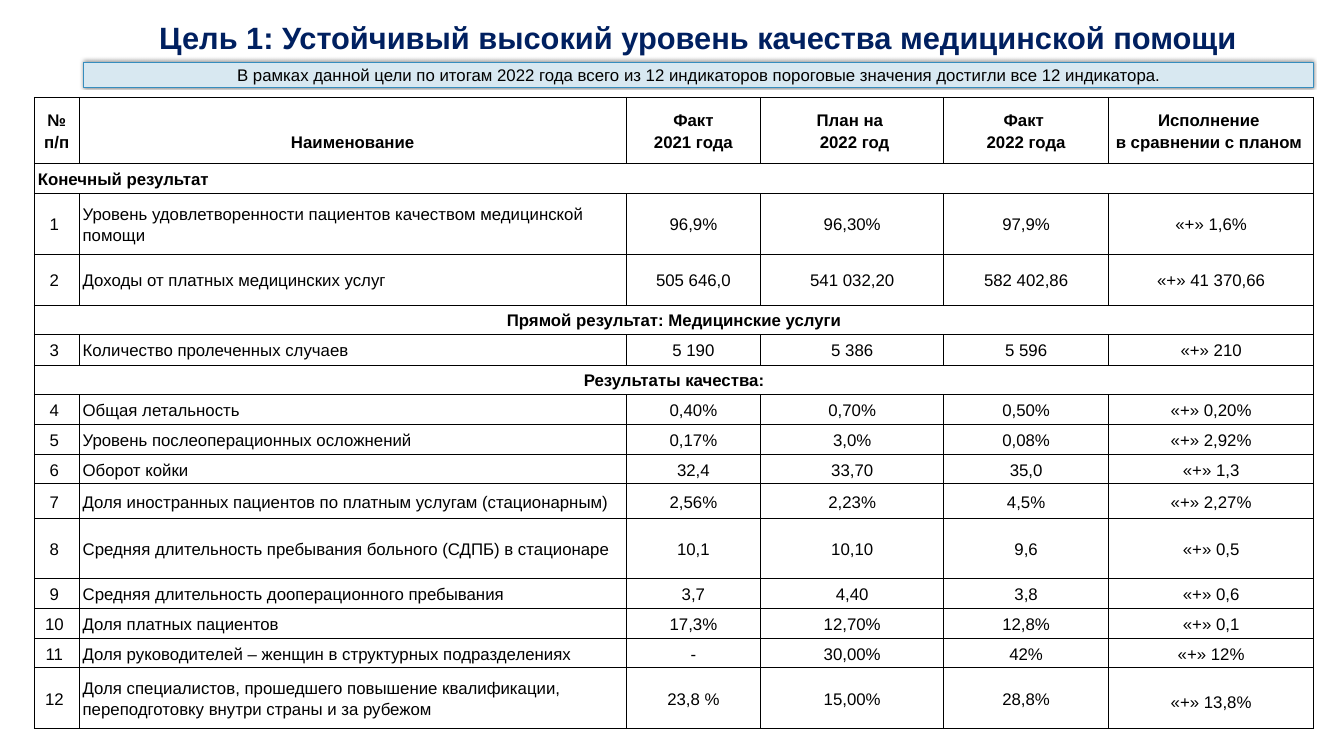
from pptx import Presentation
from pptx.dml.color import RGBColor
from pptx.enum.shapes import MSO_SHAPE as SHAPE
from pptx.enum.text import MSO_ANCHOR as ANCHOR, PP_ALIGN as ALIGN
from pptx.oxml import parse_xml
from pptx.oxml.ns import nsdecls
from pptx.util import Inches, Pt

NAVY, BLACK, PALE, BLUE = "002060", "000000", "D8E8F1", "368DBE"
COLS = [0.89, 10.85, 2.67, 3.63, 3.27, 4.07]
ROW_H, TALL_ROW_H = 0.59, 1.2
ROW_HEIGHTS = {0: 1.32, 2: TALL_ROW_H, 3: 1.01, 5: 0.6, 10: 0.68, 11: TALL_ROW_H, 15: TALL_ROW_H}
HEADER = ["№ п/п", "Наименование", "Факт\n2021 года", "План на \n 2022 год",
          "Факт \n2022 года", "Исполнение \nв сравнении с планом "]
SECTIONS = [
    ("Конечный результат", ALIGN.LEFT, [
        ("Уровень удовлетворенности пациентов качеством медицинской помощи", "96,9%", "96,30%", "97,9%", "1,6%"),
        ("Доходы от платных медицинских услуг", "505 646,0", "541 032,20", "582 402,86", "41 370,66"),
    ]),
    ("Прямой результат: Медицинские услуги", ALIGN.CENTER, [
        ("Количество пролеченных случаев", "5 190", "5 386", "5 596", "210"),
    ]),
    ("Результаты качества:", ALIGN.CENTER, [
        ("Общая летальность", "0,40%", "0,70%", "0,50%", "0,20%"),
        ("Уровень послеоперационных осложнений", "0,17%", "3,0%", "0,08%", "2,92%"),
        ("Оборот койки", "32,4", "33,70", "35,0", "1,3"),
        ("Доля иностранных пациентов по платным услугам (стационарным)", "2,56%", "2,23%", "4,5%", "2,27%"),
        ("Средняя длительность пребывания больного (СДПБ) в стационаре", "10,1", "10,10", "9,6", "0,5"),
        ("Средняя длительность дооперационного пребывания", "3,7", "4,40", "3,8", "0,6"),
        ("Доля платных пациентов", "17,3%", "12,70%", "12,8%", "0,1"),
        ("Доля руководителей – женщин в структурных подразделениях", "-", "30,00%", "42%", "12%"),
        ("Доля специалистов, прошедшего повышение квалификации, переподготовку внутри страны и за рубежом",
         "23,8 %", "15,00%", "28,8%", "13,8%"),
    ]),
]


def rgb(color):
    return RGBColor.from_string(color)


def write(tf, text, size=24, color=BLACK, bold=False, align=ALIGN.CENTER, spacing=1.0):
    tf.word_wrap = True
    for i, line in enumerate(text.split("\n")):
        p = tf.paragraphs[0] if i == 0 else tf.add_paragraph()
        p.alignment, p.line_spacing = align, spacing
        r = p.add_run()
        r.text = line
        for name, value in {"name": "Arial", "size": Pt(size), "bold": bold}.items():
            setattr(r.font, name, value)
        r.font.color.rgb = rgb(color)


def add_title(slide, box):
    s = slide.shapes.add_shape(SHAPE.ROUNDED_RECTANGLE, *map(Inches, box))
    s.adjustments[0] = 0.03
    s.shadow.inherit = False
    s.fill.background()
    s.line.fill.background()
    tf = s.text_frame
    tf.margin_left = tf.margin_right = 0
    tf.vertical_anchor = ANCHOR.MIDDLE
    write(tf, "Цель 1: Устойчивый высокий уровень качества медицинской помощи", 44, NAVY, True)


def add_summary(slide, box):
    s = slide.shapes.add_shape(SHAPE.RECTANGLE, *map(Inches, box))
    s.fill.solid()
    s.fill.fore_color.rgb = rgb(PALE)
    s.line.color.rgb = rgb(BLUE)
    s.line.width = Pt(0.75)
    s.element.spPr.append(parse_xml(
        f'<a:effectLst {nsdecls("a")}><a:outerShdw blurRad="{Pt(5)}" dist="{Pt(2)}" dir="{245 * 60000}">'
        f'<a:srgbClr val="{BLACK}"><a:alpha val="50000"/></a:srgbClr></a:outerShdw></a:effectLst>'))
    s.text_frame.vertical_anchor = ANCHOR.TOP
    write(s.text_frame, "В рамках данной цели по итогам 2022 года всего из 12 индикаторов "
                        "пороговые значения достигли все 12 индикатора.")


def style_cell(cell):
    tcPr = cell._tc.get_or_add_tcPr()
    for side in "LRTB":
        tcPr.append(parse_xml(
            f'<a:ln{side} {nsdecls("a")} w="{Pt(1)}"><a:solidFill><a:srgbClr val="{BLACK}"/>'
            f'</a:solidFill></a:ln{side}>'))
    cell.fill.background()
    for name, value in {"margin_left": Inches(0.07), "margin_right": Inches(0.07), "margin_top": 0,
                        "margin_bottom": 0, "vertical_anchor": ANCHOR.MIDDLE}.items():
        setattr(cell, name, value)


def add_indicators(slide, box):
    count = 1 + sum(1 + len(items) for _, _, items in SECTIONS)
    table = slide.shapes.add_table(count, len(COLS), *map(Inches, box)).table
    table.first_row = table.horz_banding = False
    for column, width in zip(table.columns, COLS):
        column.width = Inches(width)
    for i, row in enumerate(table.rows):
        row.height = Inches(ROW_HEIGHTS.get(i, ROW_H))
    for cell in table.iter_cells():
        style_cell(cell)

    for c, text in enumerate(HEADER):
        write(table.cell(0, c).text_frame, text, bold=True, spacing=1.15)
    table.cell(0, 1).margin_top = Inches(0.44)

    row, number = 1, 1
    for heading, align, items in SECTIONS:
        table.cell(row, 0).merge(table.cell(row, len(COLS) - 1))
        write(table.cell(row, 0).text_frame, heading, bold=True, align=align, spacing=1.15)
        row += 1
        for *values, change in items:
            for c, text in enumerate([f"{number} ", *values, f"«+» {change}"]):
                last = row == count - 1 and c == len(COLS) - 1
                write(table.cell(row, c).text_frame, text, spacing=1.5 if last else 1.15,
                      align=ALIGN.LEFT if c == 1 else ALIGN.CENTER)
            row, number = row + 1, number + 1


def main():
    prs = Presentation()
    prs.slide_width, prs.slide_height = Inches(26.66), Inches(15)
    slide = prs.slides.add_slide(prs.slide_layouts[6])
    add_title(slide, (3.01, 0.39, 21.7, 0.7))
    add_indicators(slide, (0.68, 1.93, 25.38, 12.47))
    add_summary(slide, (1.66, 1.23, 24.4, 0.5))
    prs.save("out.pptx")


if __name__ == "__main__":
    main()
